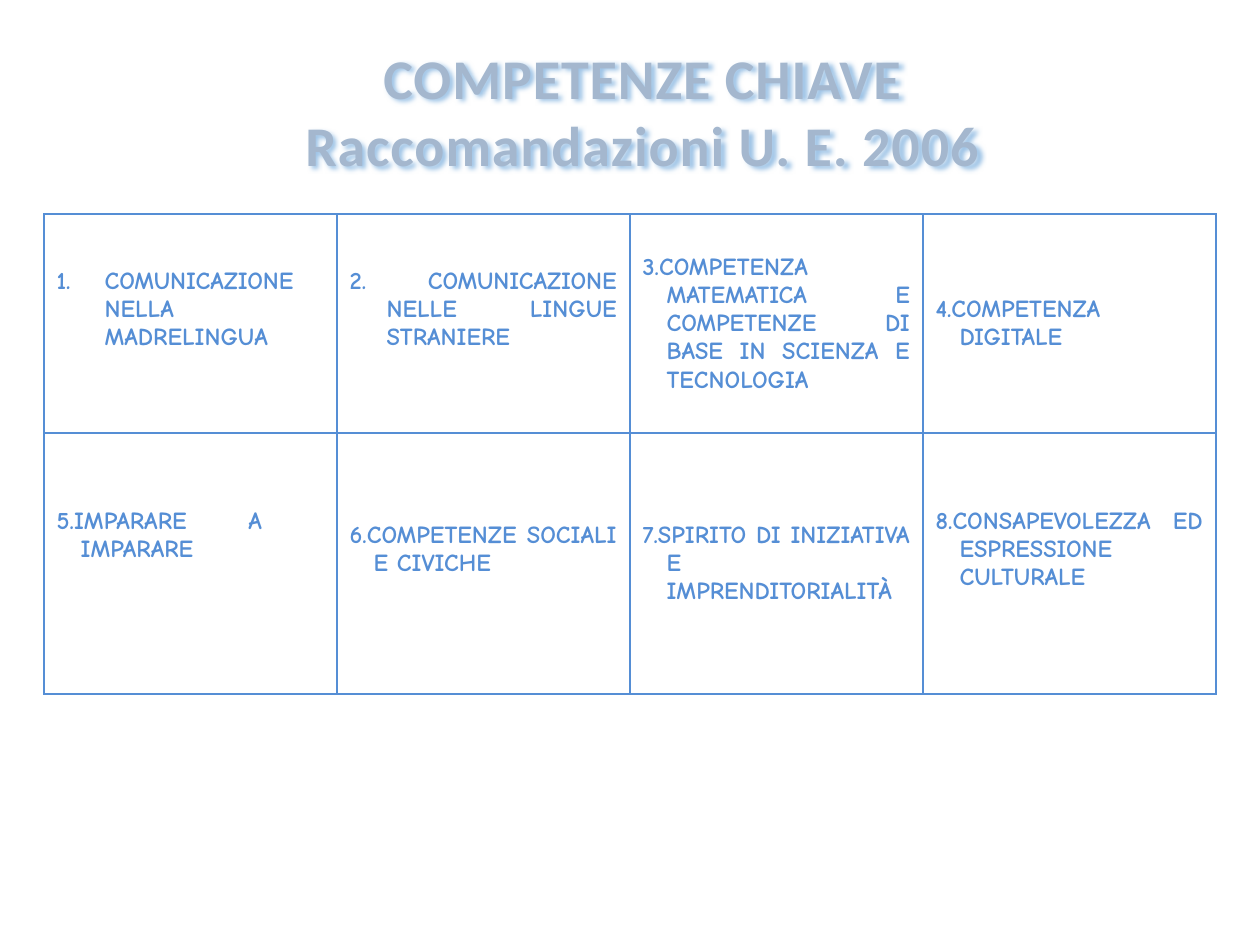
"""Build a slide with the eight EU key competences in a two-row table."""
import pptx
import pptx.dml.color
import pptx.enum.text
import pptx.oxml
import pptx.oxml.ns
import pptx.util

PX = 914400 // 126
NS = pptx.oxml.ns.nsdecls("a")
TITLE = pptx.dml.color.RGBColor(0xA4, 0xB7, 0xCE)
BLUE = pptx.dml.color.RGBColor(0x55, 0x8E, 0xD5)
SHADOW = pptx.dml.color.RGBColor(0x9D, 0xC3, 0xE6)
ALIGN = pptx.enum.text.PP_ALIGN


def write(p, text, *, font, size, color, align, spacing=0):
    p.alignment = align
    r = p.add_run()
    r.text = text
    r.font.name, r.font.size, r.font.bold = font, pptx.util.Pt(size), True
    r.font.color.rgb = color
    if spacing:
        r.font._element.set("spc", str(spacing))


prs = pptx.Presentation()
prs.slide_width, prs.slide_height = 1260 * PX, 945 * PX
s = prs.slides.add_slide(prs.slide_layouts[6])

sp = s.shapes.add_textbox(292 * PX, 37 * PX, 701 * PX, 149 * PX)
tf = sp.text_frame
tf.word_wrap = False
lines = ["COMPETENZE CHIAVE", "Raccomandazioni U. E. 2006"]
for i, text in enumerate(lines):
    p = tf.add_paragraph() if i else tf.paragraphs[0]
    write(p, text, font="Calibri", size=32, color=TITLE, align=ALIGN.CENTER, spacing=50)
sp._element.spPr.append(pptx.oxml.parse_xml(
    f'<a:effectLst {NS}><a:outerShdw blurRad="{5 * PX}" dist="{3 * PX}" dir="2700000">'
    f'<a:srgbClr val="{SHADOW}"/></a:outerShdw></a:effectLst>'))

# text, hanging indent, lift above the middle, extra right margin
rows = [
    [("COMUNICAZIONE NELLA MADRELINGUA", 48, 28, 0),
     ("2. COMUNICAZIONE NELLE LINGUE STRANIERE", 37, 28, 0),
     ("3.COMPETENZA MATEMATICA E COMPETENZE DI BASE IN SCIENZA E TECNOLOGIA", 24, 0, 0),
     ("4.COMPETENZA DIGITALE", 24, 0, 0)],
    [("5.IMPARARE A IMPARARE", 24, 56, 62),
     ("6.COMPETENZE SOCIALI E CIVICHE", 24, 28, 0),
     ("7.SPIRITO DI INIZIATIVA E IMPRENDITORIALITÀ", 24, 0, 0),
     ("8.CONSAPEVOLEZZA ED ESPRESSIONE CULTURALE", 24, 28, 0)],
]
table = s.shapes.add_table(2, 4, 44 * PX, 214 * PX, 1172 * PX, 480 * PX).table
table.first_row = table.horz_banding = False
for column in table.columns:
    column.width = 293 * PX
for row, height in zip(table.rows, [219, 261]):
    row.height = height * PX

for row, items in zip(table.rows, rows):
    for cell, (text, indent, lift, inset) in zip(row.cells, items):
        cell.vertical_anchor = pptx.enum.text.MSO_ANCHOR.MIDDLE
        cell.margin_bottom = (6 + lift) * PX
        cell.margin_right = (13 + inset) * PX
        p = cell.text_frame.paragraphs[0]
        write(p, text, font="Comic Neue", size=14, color=BLUE, align=ALIGN.JUSTIFY)
        pPr = p._p.get_or_add_pPr()
        pPr.set("marL", str(indent * PX))
        pPr.set("indent", str(-indent * PX))
        tcPr = cell._tc.get_or_add_tcPr()
        for side in ("lnL", "lnR", "lnT", "lnB"):
            tcPr.append(pptx.oxml.parse_xml(
                f'<a:{side} {NS} w="12700"><a:solidFill><a:srgbClr val="{BLUE}"/>'
                f'</a:solidFill></a:{side}>'))
        cell.fill.background()

pPr = table.cell(0, 0).text_frame.paragraphs[0]._p.get_or_add_pPr()
pPr.append(pptx.oxml.parse_xml(f'<a:buFont {NS} typeface="+mj-lt"/>'))
pPr.append(pptx.oxml.parse_xml(f'<a:buAutoNum {NS} type="arabicPeriod"/>'))

prs.save("out.pptx")
